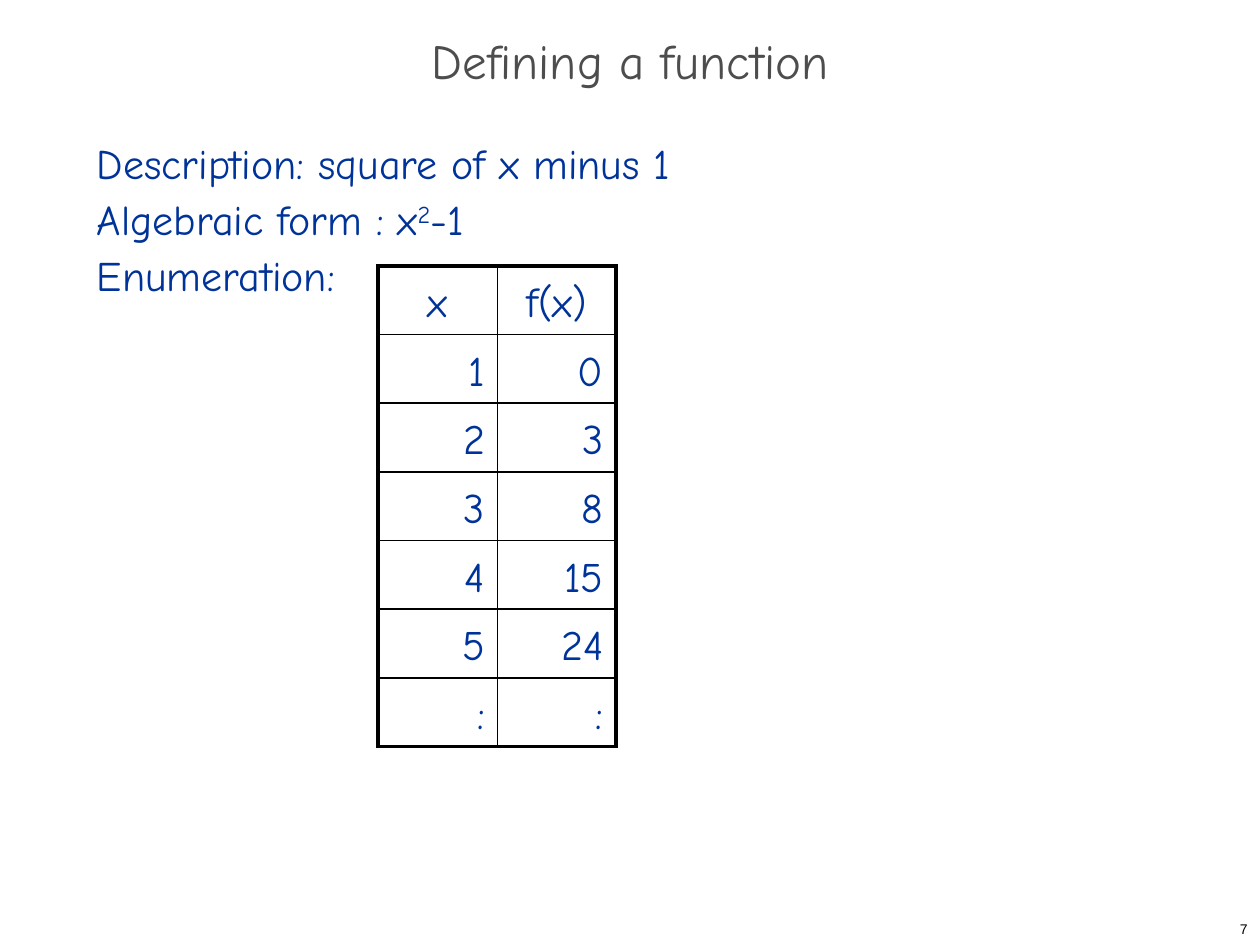
from dataclasses import dataclass

from lxml import etree
from pptx import Presentation
from pptx.dml.color import RGBColor
from pptx.enum.text import MSO_ANCHOR, PP_ALIGN
from pptx.oxml.ns import qn
from pptx.util import Inches, Pt

LEFT, CENTER, RIGHT = PP_ALIGN.LEFT, PP_ALIGN.CENTER, PP_ALIGN.RIGHT
TOP, MIDDLE = MSO_ANCHOR.TOP, MSO_ANCHOR.MIDDLE


@dataclass(frozen=True)
class Theme:
    title: dict
    body: dict
    number: dict
    line_spacing: Pt = Pt(32)
    border_color: str = "000000"
    inner_border: Pt = Pt(1)
    outer_border: Pt = Pt(2.25)


theme = Theme(
    title={"name": "Comic Neue", "size": Pt(28), "color": "4D4D4D"},
    body={"name": "Comic Neue", "size": Pt(24), "color": "003399"},
    number={"name": "Arial", "size": Pt(8), "color": "000000"},
)


def write_paragraph(paragraph, pieces, style, alignment, spacing):
    """Write the pieces as runs; every second piece is a superscript."""
    paragraph.alignment = alignment
    paragraph.line_spacing = spacing
    for index, piece in enumerate(pieces):
        run = paragraph.add_run()
        run.text = piece
        for attribute in ("name", "size"):
            setattr(run.font, attribute, style[attribute])
        run.font.color.rgb = RGBColor.from_string(style["color"])
        if index % 2:
            run._r.get_or_add_rPr().set("baseline", "30000")


def add_border(cell, side, width):
    line = etree.SubElement(cell._tc.get_or_add_tcPr(), qn(f"a:ln{side}"), w=str(int(width)))
    fill = etree.SubElement(line, qn("a:solidFill"))
    etree.SubElement(fill, qn("a:srgbClr"), val=theme.border_color)


presentation = Presentation()
presentation.slide_width, presentation.slide_height = Inches(10), Inches(7.5)
slide = presentation.slides.add_slide(presentation.slide_layouts[6])

# Title, definitions and slide number
description = [
    ["Description: square of x minus 1"],
    ["Algebraic form : x", "2", "-1"],
    ["Enumeration:"],
]
text_boxes = [
    ((7.92, 7.25, 2.08, 0.25), [["7"]], theme.number, RIGHT, MIDDLE, 1.0),
    ((0, 0.17, 10, 0.72), [["Defining a function"]], theme.title, CENTER, MIDDLE, 0.7),
    ((0.67, 1, 8.46, 5.92), description, theme.body, LEFT, TOP, theme.line_spacing),
]
for box, lines, style, alignment, anchor, spacing in text_boxes:
    frame = slide.shapes.add_textbox(*map(Inches, box)).text_frame
    frame.word_wrap = True
    frame.vertical_anchor = anchor
    for index, pieces in enumerate(lines):
        paragraph = frame.add_paragraph() if index else frame.paragraphs[0]
        write_paragraph(paragraph, pieces, style, alignment, spacing)

# Table of function values
values = [("x", "f(x)")] + [(str(x), str(x * x - 1)) for x in range(1, 6)] + [(":", ":")]
last_row, last_column = len(values) - 1, len(values[0]) - 1
table = slide.shapes.add_table(
    len(values), len(values[0]), Inches(3), Inches(2.11), Inches(1.89), Inches(3.81)
).table
table.first_row = table.horz_banding = False
for column, width in zip(table.columns, (0.95, 0.94)):
    column.width = Inches(width)

for row, texts in enumerate(values):
    for column, text in enumerate(texts):
        cell = table.cell(row, column)
        alignment = RIGHT if row else CENTER
        write_paragraph(
            cell.text_frame.paragraphs[0], [text], theme.body, alignment, theme.line_spacing
        )
        outer_sides = {
            "L": column == 0,
            "R": column == last_column,
            "T": row == 0,
            "B": row == last_row,
        }
        for side, is_outer in outer_sides.items():
            add_border(cell, side, theme.outer_border if is_outer else theme.inner_border)
        cell.fill.background()

presentation.save("out.pptx")
